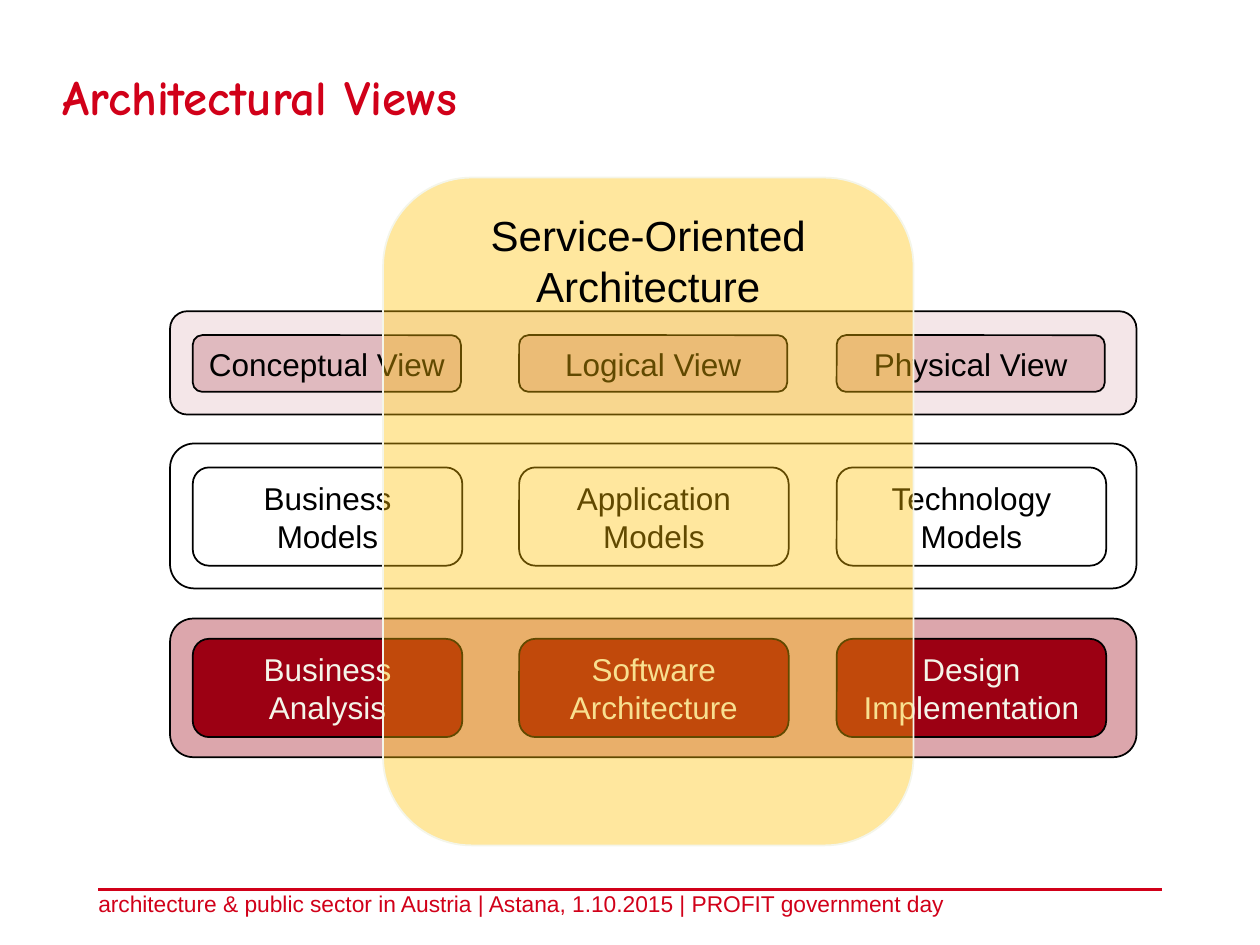
"""Builds the Architectural Views slide: three layers crossed by a service pillar."""
from dataclasses import dataclass

from lxml import etree
from pptx import Presentation
from pptx import util as u
from pptx.dml.color import RGBColor
from pptx.enum import shapes, text
from pptx.oxml import ns

RED, BLACK, IVORY = "D10019", "000000", "F4F5E9"
BAND_LEFT, BAND_WIDTH = 97.2, 552.24
BOX_LEFTS, BOX_WIDTH = (110.16, 296.64, 478.08), 154


@dataclass
class Frame:
    left: float
    top: float
    width: float
    height: float

    def lengths(self) -> list[u.Length]:
        return [u.Pt(value) for value in (self.left, self.top, self.width, self.height)]


@dataclass
class Layer:
    top: float
    height: float
    box_top: float
    box_height: float
    box_width: float
    color: str
    text_color: str
    labels: tuple[str, str, str]
    wrap: bool = True


LAYERS = [
    Layer(353.52, 79.2, 365.04, 56.16, BOX_WIDTH, "9C0013", IVORY,
          ("Business Analysis", "Software\nArchitecture", "Design Implementation")),
    Layer(253.44, 82.8, 267.12, 56.16, BOX_WIDTH, "FFFFFF", BLACK,
          ("Business Models", "Application Models", "Technology Models")),
    Layer(177.84, 59.04, 191.52, 32.4, 153.2, "E0BABF", BLACK,
          ("Conceptual View", "Logical View", "Physical View"), wrap=False),
]


def paint(color_format, color: str) -> None:
    color_format.rgb = RGBColor.from_string(color)


def format_text(frame, size: float, color: str, font: str = "Arial",
                bold: bool = False, align=text.PP_ALIGN.CENTER) -> None:
    for paragraph in frame.paragraphs:
        paragraph.alignment = align
        for run in paragraph.runs:
            run.font.size = u.Pt(size)
            run.font.name = font
            run.font.bold = bold
            paint(run.font.color, color)


def add_panel(slide, frame: Frame, fill: str, line: str = BLACK, opacity: int = 100):
    shape = slide.shapes.add_shape(shapes.MSO_SHAPE.ROUNDED_RECTANGLE, *frame.lengths())
    shape.adjustments[0] = 0.167
    shape.shadow.inherit = False
    shape.fill.solid()
    paint(shape.fill.fore_color, fill)
    paint(shape.line.color, line)
    shape.line.width = u.Pt(1)
    if opacity < 100:
        color = shape.fill._xPr.find(ns.qn("a:solidFill"))[0]
        etree.SubElement(color, ns.qn("a:alpha"), val=str(opacity * 1000))
    return shape


def add_layer_boxes(slide, layer: Layer) -> None:
    for left, label in zip(BOX_LEFTS, layer.labels):
        frame = Frame(left, layer.box_top, layer.box_width, layer.box_height)
        box = add_panel(slide, frame, layer.color)
        box.text_frame.text = label
        box.text_frame.word_wrap = layer.wrap
        box.text_frame.vertical_anchor = text.MSO_ANCHOR.MIDDLE
        format_text(box.text_frame, 18, layer.text_color)


def add_pillar(slide) -> None:
    pillar = add_panel(slide, Frame(218.88, 101.52, 303.12, 381.6), "FFC000", IVORY, 38)
    pillar.text_frame.text = "Service-Oriented Architecture"
    pillar.text_frame.word_wrap = True
    pillar.text_frame.vertical_anchor = text.MSO_ANCHOR.TOP
    format_text(pillar.text_frame, 24, BLACK)


def add_caption(slide, frame: Frame, words: str, size: float,
                font: str = "Arial", bold: bool = False) -> None:
    text_frame = slide.shapes.add_textbox(*frame.lengths()).text_frame
    text_frame.text = words
    text_frame.word_wrap = True
    text_frame.margin_left = text_frame.margin_right = 0
    text_frame.margin_top = text_frame.margin_bottom = 0
    format_text(text_frame, size, RED, font, bold, text.PP_ALIGN.LEFT)


def add_footer_rule(slide) -> None:
    rule = slide.shapes.add_connector(shapes.MSO_CONNECTOR.STRAIGHT, u.Pt(56.16),
                                      u.Pt(508.32), u.Pt(663.84), u.Pt(508.32))
    paint(rule.line.color, RED)
    rule.line.width = u.Pt(1.5)
    etree.SubElement(rule._element.spPr, ns.qn("a:effectLst"))


def main() -> None:
    presentation = Presentation()
    presentation.slide_width, presentation.slide_height = u.Pt(720), u.Pt(540)
    slide = presentation.slides.add_slide(presentation.slide_layouts[6])
    add_footer_rule(slide)
    for layer in LAYERS:
        band = Frame(BAND_LEFT, layer.top, BAND_WIDTH, layer.height)
        add_panel(slide, band, layer.color, opacity=35)
    add_caption(slide, Frame(36, 38.16, 648, 90), "Architectural Views", 28, "Comic Neue", True)
    for layer in reversed(LAYERS):
        add_layer_boxes(slide, layer)
    add_pillar(slide)
    add_caption(slide, Frame(56.16, 508.32, 511.92, 15.84),
                "architecture & public sector in Austria | Astana, 1.10.2015 | "
                "PROFIT government day", 13)
    presentation.save("out.pptx")


if __name__ == "__main__":
    main()
